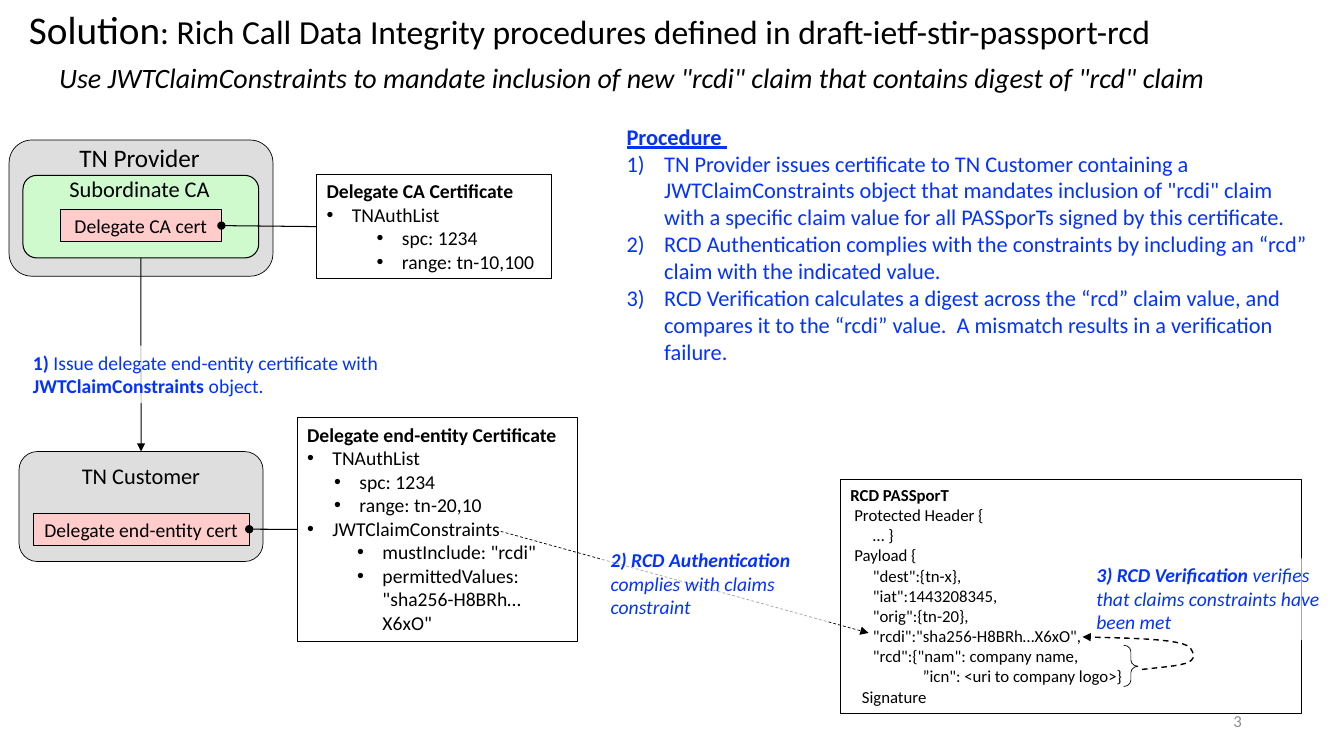
from lxml import etree
from pptx import Presentation
from pptx import util as u
from pptx.dml import color
from pptx.enum import dml, shapes, text
from pptx.oxml import ns

S = shapes.MSO_SHAPE
LEFT, CENTER, RIGHT = text.PP_ALIGN.LEFT, text.PP_ALIGN.CENTER, text.PP_ALIGN.RIGHT
TOP, MIDDLE = text.MSO_ANCHOR.TOP, text.MSO_ANCHOR.MIDDLE
BLUE, GREY, GREEN, PINK = "0432FF", "D9D9D9", "CCFFCC", "FFCCCC"
DOT, NUMBER = "buChar", "buAutoNum"


def rgb(value):
    return color.RGBColor.from_string(value)


def add(parent, tag, **attrs):
    return etree.SubElement(parent, ns.qn("a:" + tag), attrs)


def write(sp, paras, size=14, ink="000000", italic=False, align=LEFT,
          anchor=TOP, wrap=True, grow=True):
    """Each paragraph is a string, or (string, level, left, hang, bullet); **x** is bold."""
    tf = sp.text_frame
    tf.word_wrap, tf.vertical_anchor = wrap, anchor
    tf.auto_size = text.MSO_AUTO_SIZE.SHAPE_TO_FIT_TEXT if grow else text.MSO_AUTO_SIZE.NONE
    for i, para in enumerate(paras):
        words, level, left, hang, bullet = (para, 0, 0, 0, None) if isinstance(para, str) else para
        p = tf.paragraphs[0] if i == 0 else tf.add_paragraph()
        p.alignment, p.level = align, level
        if left:
            pPr = p._p.get_or_add_pPr()
            pPr.set("marL", str(u.Cm(left)))
            pPr.set("indent", str(-u.Cm(hang)))
            if bullet == DOT:
                add(pPr, "buFont", typeface="Arial")
                add(pPr, DOT, char="•")
            elif bullet == NUMBER:
                add(pPr, NUMBER, type="arabicParenR")
        for j, part in enumerate(words.split("**")):
            if part:
                r = p.add_run()
                r.text = part
                r.font.name, r.font.size = "Calibri", u.Pt(size)
                r.font.bold, r.font.italic = j % 2 == 1, italic
                r.font.color.rgb = rgb(ink)
    return tf


def dot(words, left=0.64, level=0):
    return words, level, left, 0.64, DOT


def step(words):
    return words, 0, 0.95, 0.95, NUMBER


def code(words, left):
    return words, 0, left, 0, None


class Diagram:
    def __init__(self, slide):
        self.shapes = slide.shapes

    def style_line(self, sp, weight, dashed=False, end=None):
        sp.line.color.rgb, sp.line.width = rgb("000000"), u.Pt(weight)
        if dashed:
            sp.line.dash_style = dml.MSO_LINE.DASH
        if end:
            add(sp.line._get_or_add_ln(), "tailEnd", type=end)

    def box(self, x, y, w, h, kind=S.RECTANGLE, fill=None, alpha=100, weight=0.75):
        sp = self.shapes.add_shape(kind, u.Cm(x), u.Cm(y), u.Cm(w), u.Cm(h))
        sp.shadow.inherit = False
        if fill:
            sp.fill.solid()
            sp.fill.fore_color.rgb = rgb(fill)
            if alpha < 100:
                clr = sp.fill._xPr.find(".//" + ns.qn("a:srgbClr"))
                add(clr, "alpha", val=str(alpha * 1000))
        else:
            sp.fill.background()
        if weight:
            self.style_line(sp, weight)
        else:
            sp.line.fill.background()
        return sp

    def label(self, x, y, w, h, paras, **fmt):
        sp = self.shapes.add_textbox(u.Cm(x), u.Cm(y), u.Cm(w), u.Cm(h))
        return write(sp, paras, **fmt)

    def caption(self, x, y, w, h, words, alpha, **fmt):
        write(self.box(x, y, w, h, fill="FFFFFF", alpha=alpha, weight=0), [words], ink=BLUE, **fmt)

    def line(self, p0, p1, weight=0.75, **style):
        c = self.shapes.add_connector(shapes.MSO_CONNECTOR.STRAIGHT,
                                      *(u.Cm(v) for v in p0 + p1))
        add(c._element.spPr, "effectLst")
        self.style_line(c, weight, **style)
        return c

    def join(self, a, a_side, b, b_side, end):
        c = self.line((0, 0), (1, 1), end=end)
        c.begin_connect(a, a_side)
        c.end_connect(b, b_side)

    def curve(self, p0, beziers, steps=12, **style):
        fb = self.shapes.build_freeform(u.Cm(p0[0]), u.Cm(p0[1]))
        points = []
        for p1, p2, p3 in beziers:
            for t in (k / steps for k in range(1, steps + 1)):
                s = 1 - t
                points.append(tuple(
                    u.Cm(s**3 * a + 3 * s * s * t * b + 3 * s * t * t * c + t**3 * d)
                    for a, b, c, d in zip(p0, p1, p2, p3)))
            p0 = p3
        fb.add_line_segments(points, close=False)
        sp = fb.convert_to_shape()
        sp.shadow.inherit = False
        sp.fill.background()
        self.style_line(sp, **style)


def main():
    prs = Presentation()
    prs.slide_width, prs.slide_height = u.Cm(33.87), u.Cm(19.05)
    d = Diagram(prs.slides.add_slide(prs.slide_layouts[6]))

    # Provider
    d.box(0.23, 3.53, 6.65, 3.43, S.ROUNDED_RECTANGLE, GREY, 85, 0.5)
    sub_ca = d.box(0.58, 4.42, 5.94, 2.08, S.ROUNDED_RECTANGLE, GREEN, 85)
    d.label(1.75, 3.45, 3.58, 1.02, ["TN Provider"], size=18, wrap=False)
    d.label(1.5, 4.29, 4.09, 0.94, ["Subordinate CA"], size=16, wrap=False)

    # Title and subtitle
    tf = d.label(0.48, 0, 29.11, 1.45, [
        "Solution****: Rich Call Data Integrity procedures defined in draft-ietf-stir-passport-rcd"],
        size=24, wrap=False)
    tf.paragraphs[0].runs[0].font.size = u.Pt(28)
    d.label(1.24, 1.4, 29.72, 1.12, [
        'Use JWTClaimConstraints to mandate inclusion of new "rcdi" claim '
        'that contains digest of "rcd" claim'], size=20, italic=True, wrap=False)

    # Certificate details
    entity_cert = d.box(7.49, 10.52, 7.06, 5.64)
    write(entity_cert, [
        "**Delegate end-entity Certificate**", dot("TNAuthList"),
        dot("spc: 1234", 1.32, 1), dot("range: tn-20,10", 1.32, 1),
        dot("JWTClaimConstraints"), dot('mustInclude: "rcdi"', 1.9, 1),
        dot('permittedValues: "sha256-H8BRh…X6xO"', 1.9, 1)])
    ca_cert = d.box(7.98, 4.39, 5.92, 2.64)
    write(ca_cert, [
        "**Delegate CA Certificate**", dot("TNAuthList"),
        dot("spc: 1234", 1.9, 1), dot("range: tn-10,100", 1.9, 1)])

    # Customer, and the certificate issued to it
    customer = d.box(0.48, 11.38, 6.15, 2.77, S.ROUNDED_RECTANGLE, GREY, 85, 0.5)
    write(customer, ["TN Customer"], size=16, align=CENTER, grow=False)
    d.join(sub_ca, 2, customer, 0, "triangle")
    d.caption(0.58, 8.71, 9.55, 1.45, "**1) **Issue delegate end-entity certificate with "
              "**JWTClaimConstraints** object.", 79)

    # Certificate tags with their callout lines
    for x, y, w, name, cert in ((1.52, 5.28, 4.06, "Delegate CA cert", ca_cert),
                                (0.84, 12.93, 5.44, "Delegate end-entity cert", entity_cert)):
        tag = d.box(x, y, w, 0.81, fill=PINK, weight=0.5)
        write(tag, [name], align=CENTER, anchor=MIDDLE, wrap=False, grow=False)
        d.join(cert, 1, tag, 3, "oval")

    # PASSporT
    write(d.box(21.18, 12.09, 11.63, 5.89), [
        "**RCD PASSporT**", code("Protected Header {", 0.1), code("… }", 0.57),
        code("Payload {", 0.1), code('"dest":{tn-x},', 0.57), code('"iat":1443208345,', 0.57),
        code('"orig":{tn-20},', 0.57), code('"rcdi":"sha256-H8BRh…X6xO",', 0.57),
        code('"rcd":{"nam": company name,', 0.57),
        code('”icn": <uri to company logo>}', 1.82), code("Signature", 0.29)], size=12)
    brace = d.box(28.32, 16.26, 0.36, 1.04, S.RIGHT_BRACE, weight=0.5)
    brace.adjustments[0], brace.adjustments[1] = 0.44, 0.51

    # Authentication and verification steps
    d.caption(27.38, 14.07, 6.45, 2.06, "**3) RCD Verification **verifies that claims "
              "constraints have been met", 64, italic=True)
    d.line((12.62, 13.39), (21.89, 15.95), 0.5, dashed=True, end="triangle")
    d.curve((28.78, 16.87), [((29.77, 16.76), (30.28, 16.76), (30, 16.33)),
                             ((29.82, 16.08), (28.24, 16.08), (27.28, 16.05))],
            weight=1, dashed=True, end="triangle")
    d.caption(15.14, 13.69, 5.72, 2.06, "**2) RCD Authentication **complies with claims "
              "constraint", 64, italic=True)

    # Procedure
    tf = d.label(15.54, 2.97, 17.7, 6.4, [
        "**Procedure **",
        step("TN Provider issues certificate to TN Customer containing a JWTClaimConstraints "
             'object that mandates inclusion of "rcdi" claim with a specific claim value for '
             "all PASSporTs signed by this certificate."),
        step("RCD Authentication complies with the constraints by including an “rcd” claim "
             "with the indicated value."),
        step("RCD Verification calculates a digest across the “rcd” claim value, and compares "
             "it to the “rcdi” value.  A mismatch results in a verification failure.")],
        size=16, ink=BLUE)
    tf.paragraphs[0].runs[0].font.underline = True

    # Slide number
    d.label(23.93, 17.65, 7.62, 1.02, ["3"], size=12, ink="8C8C8C", align=RIGHT,
            anchor=MIDDLE, grow=False)

    prs.save("out.pptx")


if __name__ == "__main__":
    main()
